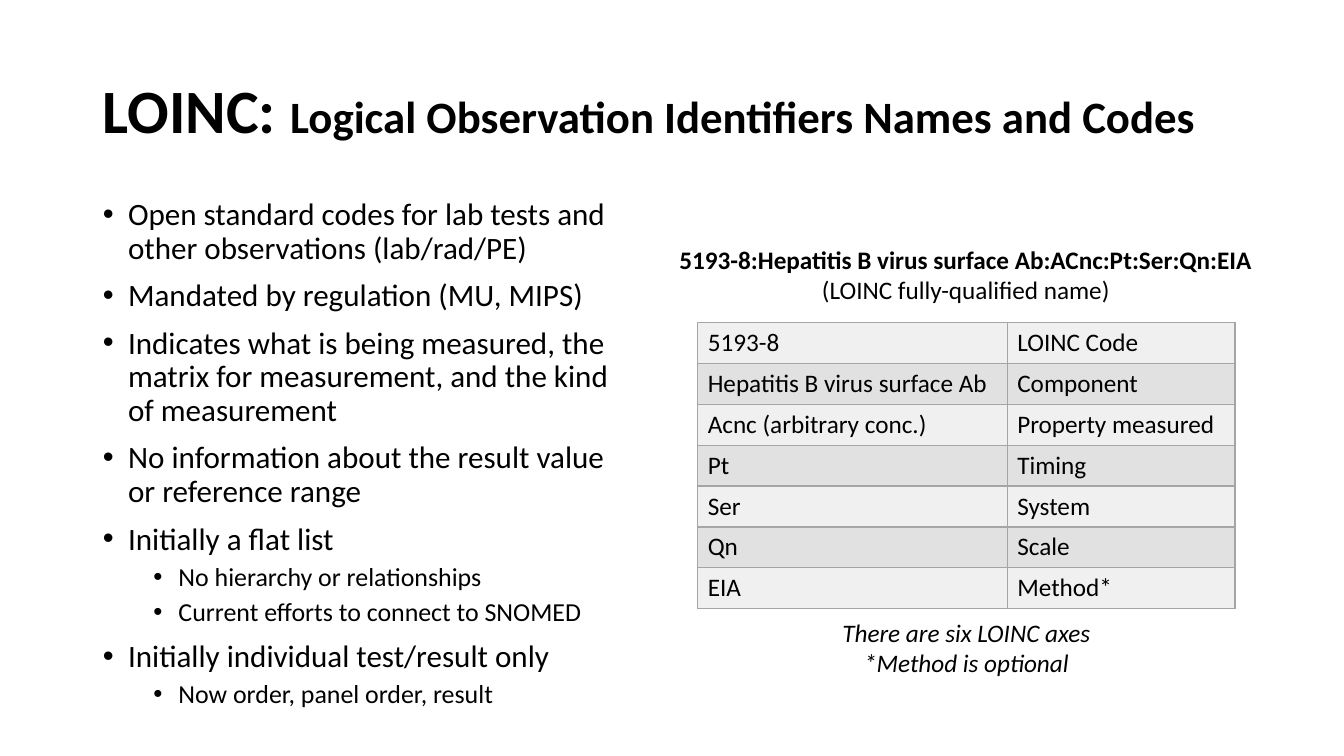
from lxml.etree import SubElement
from pptx import Presentation
from pptx.dml.color import RGBColor
from pptx.enum.text import MSO_ANCHOR, MSO_AUTO_SIZE, PP_ALIGN
from pptx.oxml.ns import qn
from pptx.util import Inches, Pt

FONT = "Calibri"
BLACK, GRID = "000000", "A5A5A5"
BANDS = ("F0F0F0", "E1E1E1")

POINTS = [
    (0, "Open standard codes for lab tests and other observations (lab/rad/PE)"),
    (0, "Mandated by regulation (MU, MIPS)"),
    (0, "Indicates what is being measured, the matrix for measurement, "
        "and the kind of measurement"),
    (0, "No information about the result value or reference range"),
    (0, "Initially a flat list"),
    (1, "No hierarchy or relationships"),
    (1, "Current efforts to connect to SNOMED"),
    (0, "Initially individual test/result only"),
    (1, "Now order, panel order, result"),
]
AXES = [
    ("5193-8", "LOINC Code"),
    ("Hepatitis B virus surface Ab", "Component"),
    ("Acnc (arbitrary conc.)", "Property measured"),
    ("Pt", "Timing"),
    ("Ser", "System"),
    ("Qn", "Scale"),
    ("EIA", "Method*"),
]


def color(code):
    return RGBColor.from_string(code)


def style(para, size, bold=False, italic=False):
    font = para.font
    font.name, font.size = FONT, Pt(size)
    font.bold, font.italic = bold, italic
    font.color.rgb = color(BLACK)


def place(shape, box):
    shape.left, shape.top, shape.width, shape.height = map(Inches, box)


def add_title(slide, box):
    title = slide.shapes.title
    place(title, box)
    frame = title.text_frame
    frame.auto_size = MSO_AUTO_SIZE.NONE
    frame.vertical_anchor = MSO_ANCHOR.MIDDLE
    para = frame.paragraphs[0]
    para.alignment, para.line_spacing = PP_ALIGN.LEFT, 0.9
    style(para, 44, bold=True)
    para.add_run().text = "LOINC: "
    name = para.add_run()
    name.text = "Logical Observation Identifiers Names and Codes"
    name.font.size = Pt(32)


def add_list(slide, box):
    body = slide.placeholders[1]
    place(body, box)
    frame = body.text_frame
    frame.auto_size = MSO_AUTO_SIZE.NONE
    frame.text = "\n".join(text for _, text in POINTS)
    for para, (level, _) in zip(frame.paragraphs, POINTS):
        para.level = level
        para.line_spacing = 0.9
        para.space_before = Pt(5 if level else 10)
        style(para, 18.5 if level else 22.2)
        # Hanging round bullet
        props = para._p.get_or_add_pPr()
        props.set("marL", str(Inches(0.25 + 0.5 * level)))
        props.set("indent", str(Inches(-0.25)))
        bullet = SubElement(props, qn("a:buFont"))
        bullet.set("typeface", "Arial")
        SubElement(props, qn("a:buChar")).set("char", "•")
        # The run defaults follow the bullet in the schema
        props.append(props.find(qn("a:defRPr")))


def add_note(slide, box, lines):
    note = slide.shapes.add_textbox(*map(Inches, box))
    frame = note.text_frame
    frame.word_wrap = False
    frame.text = "\n".join(text for text, _, _ in lines)
    for para, (_, bold, italic) in zip(frame.paragraphs, lines):
        para.alignment = PP_ALIGN.CENTER
        style(para, 18, bold, italic)


def edge(cell):
    props = cell._tc.get_or_add_tcPr()
    for at, side in enumerate(("lnL", "lnR", "lnT", "lnB")):
        line = SubElement(props, qn("a:" + side))
        line.set("w", str(Pt(1)))
        fill = SubElement(line, qn("a:solidFill"))
        SubElement(fill, qn("a:srgbClr")).set("val", GRID)
        props.insert(at, line)


def add_axes(slide, box):
    left, top, width, height = map(Inches, box)
    table = slide.shapes.add_table(len(AXES), 2, left, top, width, height).table
    table.columns[0].width = Inches(3.07)
    table.columns[1].width = width - Inches(3.07)
    table.first_row = False
    for row, texts in enumerate(AXES):
        for col, text in enumerate(texts):
            cell = table.cell(row, col)
            cell.text = text
            style(cell.text_frame.paragraphs[0], 18)
            cell.fill.solid()
            cell.fill.fore_color.rgb = color(BANDS[row % 2])
            edge(cell)


def main():
    deck = Presentation()
    deck.slide_width, deck.slide_height = Inches(13.33), Inches(7.5)
    slide = deck.slides.add_slide(deck.slide_layouts[1])
    add_title(slide, (0.92, 0.4, 11.5, 1.45))
    add_list(slide, (0.92, 1.92, 5.38, 5.39))
    # Worked example: name, its parts, footnote
    add_note(slide, (6.61, 2.37, 5.94, 0.71), [
        ("5193-8:Hepatitis B virus surface Ab:ACnc:Pt:Ser:Qn:EIA", True, False),
        ("(LOINC fully-qualified name)", False, False),
    ])
    add_axes(slide, (6.92, 3.2, 5.33, 2.84))
    add_note(slide, (8.24, 6.07, 2.69, 0.71), [
        ("There are six LOINC axes", False, True),
        ("*Method is optional", False, True),
    ])
    deck.save("out.pptx")


if __name__ == "__main__":
    main()
